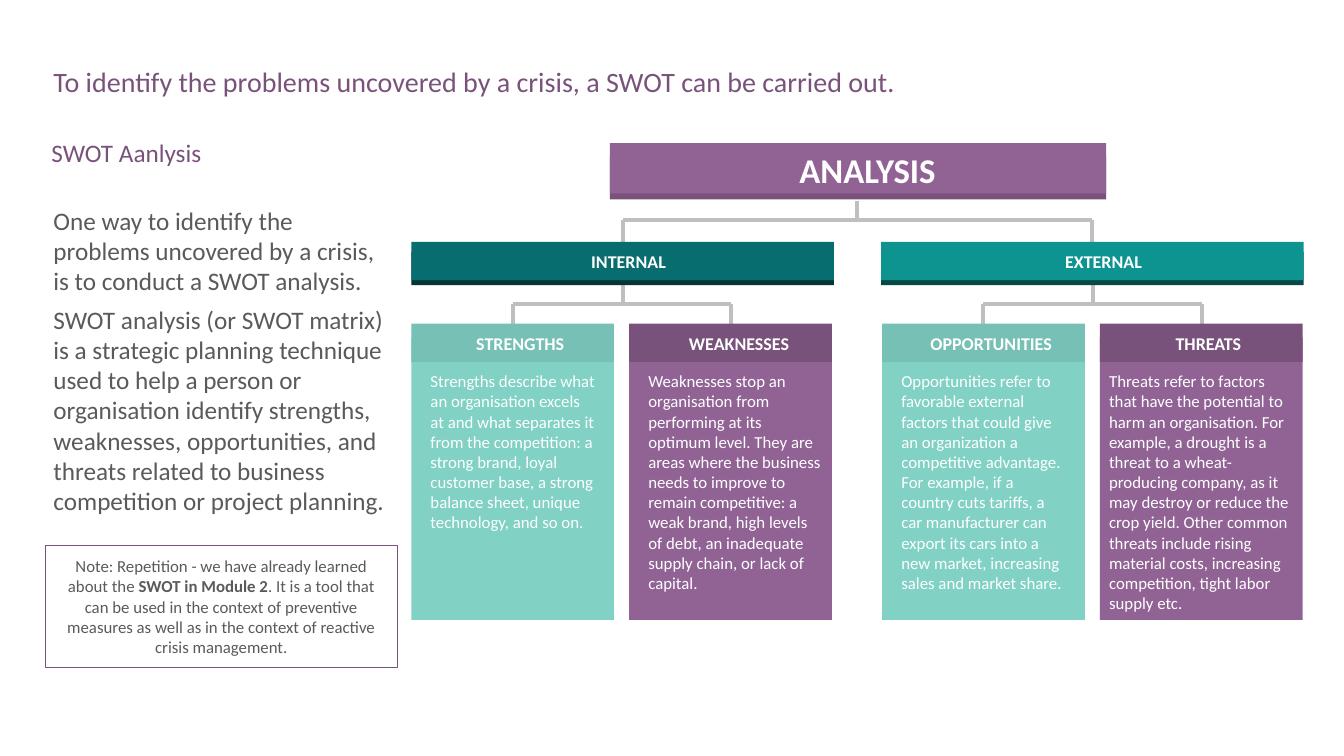
"""Build the SWOT analysis slide with its two-level tree of boxes."""
from dataclasses import dataclass

import pptx
import pptx.dml.color
import pptx.enum.shapes
import pptx.enum.text
import pptx.oxml.ns
import pptx.slide
import pptx.text.text
import pptx.util
from lxml import etree

Inches = pptx.util.Inches
ALIGN = pptx.enum.text.PP_ALIGN
ANCHOR = pptx.enum.text.MSO_ANCHOR


@dataclass(frozen=True)
class Theme:
    font: str = "Calibri"
    purple: str = "916395"
    plum: str = "79527B"
    mint: str = "81D1C5"
    sage: str = "76C0B5"
    teal: str = "0D9390"
    teal_edge: str = "064947"
    pine: str = "086D6E"
    pine_edge: str = "033637"
    grey: str = "595A59"
    rule: str = "BFBFBF"
    white: str = "FFFFFF"
    heading: float = 20
    body: float = 18
    small: float = 12
    label: float = 12.8
    banner: float = 24.8


THEME = Theme()


@dataclass(frozen=True)
class Area:
    left: float
    top: float
    width: float
    height: float


@dataclass(frozen=True)
class Span:
    text: str
    bold: bool = False


@dataclass(frozen=True)
class Bar:
    area: Area
    edge_area: Area
    label: str
    label_area: Area
    size: float
    fill: str
    edge: str


@dataclass(frozen=True)
class Card:
    left: float
    label: str
    label_left: float
    label_width: float
    fill: str
    header: str
    text: str
    text_left: float
    text_width: float


@dataclass(frozen=True)
class Tree:
    stem: float
    top: float
    middle: float
    bottom: float
    branches: tuple[float, float]


BARS = (
    Bar(Area(6.05, 1.42, 4.92, 0.5), Area(6.05, 1.55, 4.92, 0.43), "ANALYSIS",
        Area(7.77, 1.42, 1.67, 0.52), THEME.banner, THEME.purple, THEME.plum),
    Bar(Area(4.08, 2.4, 4.19, 0.38), Area(4.08, 2.5, 4.19, 0.33), "INTERNAL",
        Area(5.72, 2.43, 1.03, 0.32), THEME.label, THEME.pine, THEME.pine_edge),
    Bar(Area(8.74, 2.4, 4.19, 0.38), Area(8.74, 2.5, 4.19, 0.33), "EXTERNAL",
        Area(10.38, 2.43, 1.13, 0.32), THEME.label, THEME.teal, THEME.teal_edge),
)
CARDS = (
    Card(4.08, "STRENGTHS", 4.57, 1.18, THEME.mint, THEME.sage,
         "Strengths describe what an organisation excels at and what separates it from the "
         "competition: a strong brand, loyal customer base, a strong balance sheet, unique "
         "technology, and so on.", 4.18, 1.83),
    Card(6.24, "WEAKNESSES", 6.68, 1.3, THEME.purple, THEME.plum,
         "Weaknesses stop an organisation from performing at its optimum level. They are areas "
         "where the business needs to improve to remain competitive: a weak brand, high levels "
         "of debt, an inadequate supply chain, or lack of capital.", 6.34, 1.92),
    Card(8.75, "OPPORTUNITIES", 9.09, 1.48, THEME.mint, THEME.sage,
         "Opportunities refer to favorable external factors that could give an organization a "
         "competitive advantage. For example, if a country cuts tariffs, a car manufacturer can "
         "export its cars into a new market, increasing sales and market share.", 8.85, 1.83),
    Card(10.91, "THREATS", 11.51, 0.95, THEME.purple, THEME.plum,
         "Threats refer to factors that have the potential to harm an organisation. For example, "
         "a drought is a threat to a wheat-producing company, as it may destroy or reduce the "
         "crop yield. Other common threats include rising material costs, increasing "
         "competition, tight labor supply etc.", 10.91, 2.01),
)
TREES = (
    Tree(8.5, 1.99, 2.18, 2.4, (6.18, 10.83)),
    Tree(6.18, 2.82, 3.02, 3.21, (5.09, 7.25)),
    Tree(10.84, 2.82, 3.02, 3.21, (9.75, 11.92)),
)
INTRO = (
    (Span("One way to identify the problems uncovered by a crisis, is to conduct a SWOT analysis."),),
    (Span("SWOT analysis (or SWOT matrix) is a strategic planning technique used to help a person "
          "or organisation identify strengths, weaknesses, opportunities, and threats related to "
          "business competition or project planning."),),
)
NOTE = ((
    Span("Note: Repetition - we have already learned about the "),
    Span("SWOT in Module 2", True),
    Span(". It is a tool that can be used in the context of preventive measures as well as in "
         "the context of reactive crisis management."),
),)


def color(value: str) -> pptx.dml.color.RGBColor:
    return pptx.dml.color.RGBColor.from_string(value)


def apply(target: object, values: dict) -> None:
    for name, value in values.items():
        setattr(target, name, value)


def bounds(area: Area) -> tuple:
    return tuple(Inches(n) for n in (area.left, area.top, area.width, area.height))


def write(frame: pptx.text.text.TextFrame, paragraphs: tuple, size: float, ink: str,
          align: ALIGN = ALIGN.LEFT, anchor: ANCHOR = ANCHOR.TOP, spacing: float = 1.0,
          insets: tuple = (0.1, 0.05, 0.1, 0.05)) -> None:
    margins = ("margin_left", "margin_top", "margin_right", "margin_bottom")
    apply(frame, {"word_wrap": True, "auto_size": pptx.enum.text.MSO_AUTO_SIZE.NONE,
                  "vertical_anchor": anchor, **dict(zip(margins, map(Inches, insets)))})
    for index, spans in enumerate(paragraphs):
        para = frame.add_paragraph() if index else frame.paragraphs[0]
        apply(para, {"alignment": align, "line_spacing": spacing,
                     "space_before": pptx.util.Pt(6 if index else 0)})
        properties = para._p.get_or_add_pPr()
        properties.set("marL", "0")
        properties.set("indent", "0")
        etree.SubElement(properties, pptx.oxml.ns.qn("a:buNone"))
        for span in spans:
            run = para.add_run()
            run.text = span.text
            apply(run.font, {"name": THEME.font, "size": pptx.util.Pt(size), "bold": span.bold})
            run.font.color.rgb = color(ink)


def add_rectangle(page: pptx.slide.Slide, area: Area, fill: str) -> None:
    box = page.shapes.add_shape(pptx.enum.shapes.MSO_SHAPE.RECTANGLE, *bounds(area))
    box.shadow.inherit = False
    box.fill.solid()
    box.fill.fore_color.rgb = color(fill)
    box.line.fill.background()


def add_label(page: pptx.slide.Slide, area: Area, text: str, size: float) -> None:
    box = page.shapes.add_textbox(*bounds(area))
    write(box.text_frame, ((Span(text, True),),), size, THEME.white, ALIGN.CENTER, ANCHOR.MIDDLE)


def add_bar(page: pptx.slide.Slide, bar: Bar) -> None:
    add_rectangle(page, bar.edge_area, bar.edge)
    add_rectangle(page, bar.area, bar.fill)
    add_label(page, bar.label_area, bar.label, bar.size)


def add_card(page: pptx.slide.Slide, card: Card) -> None:
    add_rectangle(page, Area(card.left, 3.35, 2.01, 2.8), card.fill)
    add_rectangle(page, Area(card.left, 3.21, 2.01, 0.38), card.header)
    add_label(page, Area(card.label_left, 3.25, card.label_width, 0.32), card.label, THEME.label)
    box = page.shapes.add_textbox(*bounds(Area(card.text_left, 3.64, card.text_width, 2.51)))
    write(box.text_frame, ((Span(card.text),),), THEME.small, THEME.white,
          insets=(0.09, 0.04, 0.09, 0.04))


def add_tree(page: pptx.slide.Slide, tree: Tree) -> None:
    first, last = tree.branches
    lines = [(tree.stem, tree.top, tree.stem, tree.middle), (first, tree.middle, last, tree.middle)]
    lines += [(x, tree.middle, x, tree.bottom) for x in tree.branches]
    for ends in lines:
        line = page.shapes.add_connector(pptx.enum.shapes.MSO_CONNECTOR.STRAIGHT, *map(Inches, ends))
        line.line.color.rgb = color(THEME.rule)
        line.line.width = pptx.util.Pt(3)
        etree.SubElement(line._element.spPr, pptx.oxml.ns.qn("a:effectLst"))


def add_note(page: pptx.slide.Slide) -> None:
    box = page.shapes.add_shape(pptx.enum.shapes.MSO_SHAPE.RECTANGLE,
                                *bounds(Area(0.45, 5.41, 3.49, 1.21)))
    box.shadow.inherit = False
    box.fill.background()
    box.line.color.rgb = color(THEME.plum)
    box.line.width = pptx.util.Pt(1)
    write(box.text_frame, NOTE, THEME.small, THEME.grey, ALIGN.CENTER, ANCHOR.MIDDLE)


def main() -> None:
    deck = pptx.Presentation()
    apply(deck, {"slide_width": Inches(13.33), "slide_height": Inches(7.5)})
    page = deck.slides.add_slide(deck.slide_layouts.get_by_name("Two Content"))
    title, subtitle, intro = list(page.placeholders)[:3]
    areas = (Area(0.43, 0.63, 12.54, 0.64), Area(0.41, 1.35, 3.49, 0.28), Area(0.43, 1.87, 3.49, 3.68))
    for holder, area in zip((title, subtitle, intro), areas):
        apply(holder, dict(zip(("left", "top", "width", "height"), bounds(area))))
    heading = "To identify the problems uncovered by a crisis, a SWOT can be carried out."
    write(title.text_frame, ((Span(heading),),), THEME.heading, THEME.plum, spacing=0.9)
    write(subtitle.text_frame, ((Span("SWOT Aanlysis"),),), THEME.body, THEME.plum, spacing=0.9)
    write(intro.text_frame, INTRO, THEME.body, THEME.grey, anchor=ANCHOR.MIDDLE,
          insets=(0.1, 0.05, 0.1, 0.32))
    for draw, items in ((add_tree, TREES), (add_bar, BARS), (add_card, CARDS)):
        for item in items:
            draw(page, item)
    add_note(page)
    deck.save("out.pptx")


if __name__ == "__main__":
    main()
